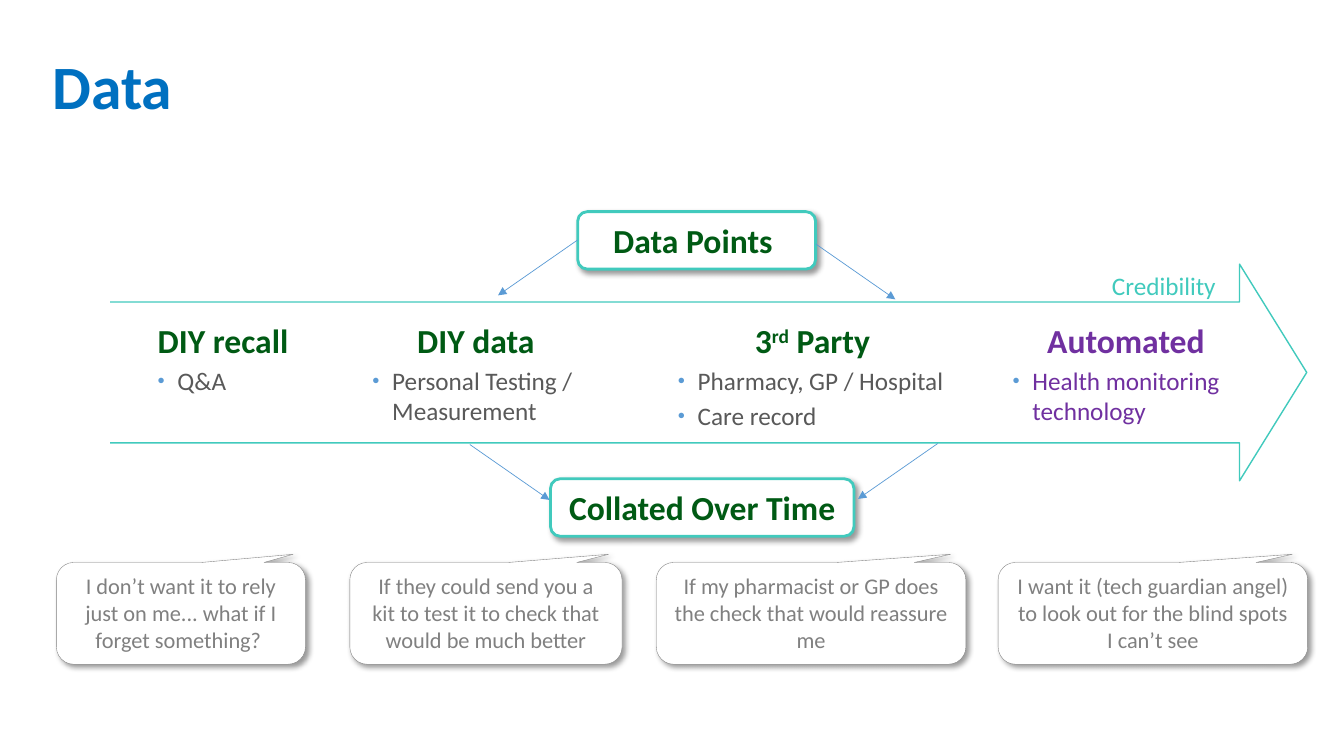
from dataclasses import dataclass

from lxml import etree
from pptx import Presentation
from pptx import util as u
from pptx.dml import color
from pptx.enum import shapes, text
from pptx.oxml import ns

# Grid: one column or row is a tenth of an inch
CELL = 0.1
COLUMNS, ROWS = 133.3, 75
FONT = "Calibri"
COLORS = {
    "title": "0070C0", "teal": "41CABD", "green": "005A14", "purple": "7030A0",
    "body": "595959", "quote": "808080", "blue": "5B9BD5", "white": "FFFFFF",
    "shadow": "000000",
}
STAGE_ROW = 31.2
QUOTE_ROW, QUOTE_ROWS = 55.8, 10.1
LABEL_ROWS = 5.7


@dataclass
class Box:
    column: float
    row: float
    columns: float
    rows: float


@dataclass
class Stage:
    box: Box
    heading: list[tuple[str, bool]]  # text, raised
    points: list[str]
    heading_color: str
    point_color: str
    quote: str
    quote_column: float
    quote_columns: float


@dataclass
class Label:
    box: Box
    caption: str


@dataclass
class Arrow:
    column: float
    row: float
    across: float


STAGES = [
    Stage(Box(14.6, STAGE_ROW, 15.8, 8.7), [("DIY recall ", False)], ["Q&A"], "green", "body",
          "I don’t want it to rely just on me... what if I forget something? ", 5.6, 24.7),
    Stage(Box(35.9, STAGE_ROW, 22.6, 11.7), [("DIY data", False)],
          ["Personal Testing / Measurement"], "green", "body",
          "If they could send you a kit to test it to check that would be much better", 34.7, 27),
    Stage(Box(66.2, STAGE_ROW, 29.5, 12.3),
          [("3", False), ("rd", True), (" Party ", False)],
          ["Pharmacy, GP / Hospital", "Care record"], "green", "body",
          "If my pharmacist or GP does the check that would reassure me", 65.1, 30.7),
    Stage(Box(99.4, STAGE_ROW, 25.3, 11.7), [("Automated ", False)],
          ["Health monitoring technology"], "purple", "purple",
          "I want it (tech guardian angel) to look out for the blind spots I can’t see", 99, 30.7),
]
LABELS = [
    Label(Box(57.3, 21, 23.6, LABEL_ROWS), "Data Points "),
    Label(Box(54.6, 47.5, 30.1, LABEL_ROWS), "Collated Over Time"),
]
ARROW_ACROSS, ARROW_DOWN = 7.9, 5.5
ARROWS = [
    Arrow(57.3, 23.8, -ARROW_ACROSS), Arrow(80.9, 24.2, ARROW_ACROSS),
    Arrow(46.6, 44.1, ARROW_ACROSS), Arrow(93, 44, -ARROW_ACROSS),
]


def cells(count: float) -> u.Length:
    return u.Inches(count * CELL)


def rgb(name: str) -> color.RGBColor:
    return color.RGBColor.from_string(COLORS[name])


def place(shape, box: Box) -> None:
    shape.left, shape.top = cells(box.column), cells(box.row)
    shape.width, shape.height = cells(box.columns), cells(box.rows)


def add_run(paragraph, content: str, size: float, tint: str,
            bold: bool = False, raised: bool = False) -> None:
    run = paragraph.add_run()
    run.text = content
    run.font.name, run.font.size, run.font.bold = FONT, u.Pt(size), bold
    run.font.color.rgb = rgb(tint)
    if raised:
        run.font._element.set("baseline", "30000")


def set_bullet(paragraph, bulleted: bool) -> None:
    properties = paragraph._p.get_or_add_pPr()
    indent = u.Inches(0.2) if bulleted else 0
    properties.set("marL", str(indent))
    properties.set("indent", str(-indent))
    if not bulleted:
        etree.SubElement(properties, ns.qn("a:buNone"))
        return
    tint = etree.SubElement(properties, ns.qn("a:buClr"))
    etree.SubElement(tint, ns.qn("a:srgbClr"), val=COLORS["blue"])
    etree.SubElement(properties, ns.qn("a:buSzPct"), val="50000")
    etree.SubElement(properties, ns.qn("a:buChar"), char="●")


def add_shadow(shape) -> None:
    effects = shape._element.spPr.find(ns.qn("a:effectLst"))
    shadow = etree.SubElement(effects, ns.qn("a:outerShdw"), blurRad=str(u.Pt(4)),
                              dist=str(u.Pt(3)), dir="2700000", algn="tl", rotWithShape="0")
    tint = etree.SubElement(shadow, ns.qn("a:srgbClr"), val=COLORS["shadow"])
    etree.SubElement(tint, ns.qn("a:alpha"), val="40000")


def add_panel(slide, kind, box: Box, line: str | None = None, width: float = 1,
              adjustments: tuple[float, ...] = (), shadow: bool = False):
    shape = slide.shapes.add_shape(kind, 0, 0, 0, 0)
    place(shape, box)
    for index, value in enumerate(adjustments):
        shape.adjustments[index] = value
    shape.fill.solid()
    shape.fill.fore_color.rgb = rgb("white")
    if line:
        shape.line.color.rgb = rgb(line)
        shape.line.width = u.Pt(width)
    else:
        shape.line.fill.background()
    shape.shadow.inherit = False
    if shadow:
        add_shadow(shape)
    return shape


def write_centered(shape, content: str, size: float, tint: str, bold: bool, anchor) -> None:
    shape.text_frame.word_wrap = True
    shape.text_frame.vertical_anchor = anchor
    paragraph = shape.text_frame.paragraphs[0]
    paragraph.alignment = text.PP_ALIGN.CENTER
    add_run(paragraph, content, size, tint, bold)


def add_stage(slide, placeholder, stage: Stage) -> None:
    # Bring the list in front of the band, then fill it
    slide.shapes._spTree.append(placeholder._element)
    place(placeholder, stage.box)
    frame = placeholder.text_frame
    frame.word_wrap = True
    frame.auto_size = text.MSO_AUTO_SIZE.SHAPE_TO_FIT_TEXT
    frame.vertical_anchor = text.MSO_ANCHOR.TOP
    heading = frame.paragraphs[0]
    heading.alignment = text.PP_ALIGN.CENTER
    set_bullet(heading, False)
    for content, raised in stage.heading:
        add_run(heading, content, 24, stage.heading_color, True, raised)
    for point in stage.points:
        paragraph = frame.add_paragraph()
        set_bullet(paragraph, True)
        add_run(paragraph, point, 18, stage.point_color)
    # Quote below the stage
    callout = add_panel(slide, shapes.MSO_SHAPE.ROUNDED_RECTANGULAR_CALLOUT,
                        Box(stage.quote_column, QUOTE_ROW, stage.quote_columns, QUOTE_ROWS),
                        "quote", 0.25, (0.45, -0.58, 0.17), True)
    write_centered(callout, stage.quote, 16, "quote", False, text.MSO_ANCHOR.TOP)


def add_arrow(slide, arrow: Arrow) -> None:
    connector = slide.shapes.add_connector(
        shapes.MSO_CONNECTOR.STRAIGHT, cells(arrow.column), cells(arrow.row),
        cells(arrow.column + arrow.across), cells(arrow.row + ARROW_DOWN))
    connector.line.color.rgb = rgb("blue")
    connector.line.width = u.Pt(0.5)
    properties = connector._element.spPr
    etree.SubElement(properties.find(ns.qn("a:ln")), ns.qn("a:tailEnd"), type="triangle")
    etree.SubElement(properties, ns.qn("a:effectLst"))


def main() -> None:
    presentation = Presentation()
    presentation.slide_width, presentation.slide_height = cells(COLUMNS), cells(ROWS)
    slide = presentation.slides.add_slide(presentation.slide_layouts.get_by_name("Comparison"))

    # Title
    title = slide.shapes.title
    place(title, Box(4.2, 1.6, 115, 14.5))
    title.text_frame.vertical_anchor = text.MSO_ANCHOR.MIDDLE
    paragraph = title.text_frame.paragraphs[0]
    paragraph.alignment, paragraph.line_spacing = text.PP_ALIGN.LEFT, 0.9
    add_run(paragraph, "Data", 44, "title", True)

    # Credibility band, open at its left end
    add_panel(slide, shapes.MSO_SHAPE.RIGHT_ARROW, Box(9.7, 26.2, 119.9, 21.5),
              "teal", 1, (0.65, 0.31))
    add_panel(slide, shapes.MSO_SHAPE.RECTANGLE, Box(7.9, 28.3, 3, 16.6))
    credibility = slide.shapes.add_textbox(0, 0, 0, 0)
    place(credibility, Box(109.3, 26.3, 13.5, 4))
    credibility.text_frame.word_wrap = True
    add_run(credibility.text_frame.paragraphs[0], "Credibility", 18, "teal")

    # Stages with their quotes
    for index, stage in enumerate(STAGES, start=1):
        add_stage(slide, slide.placeholders[index], stage)

    # Labels and the arrows joining them to the band
    for label in LABELS:
        panel = add_panel(slide, shapes.MSO_SHAPE.ROUNDED_RECTANGLE, label.box,
                          "teal", 2, shadow=True)
        write_centered(panel, label.caption, 24, "green", True, text.MSO_ANCHOR.MIDDLE)
    for arrow in ARROWS:
        add_arrow(slide, arrow)

    presentation.save("out.pptx")


if __name__ == "__main__":
    main()
